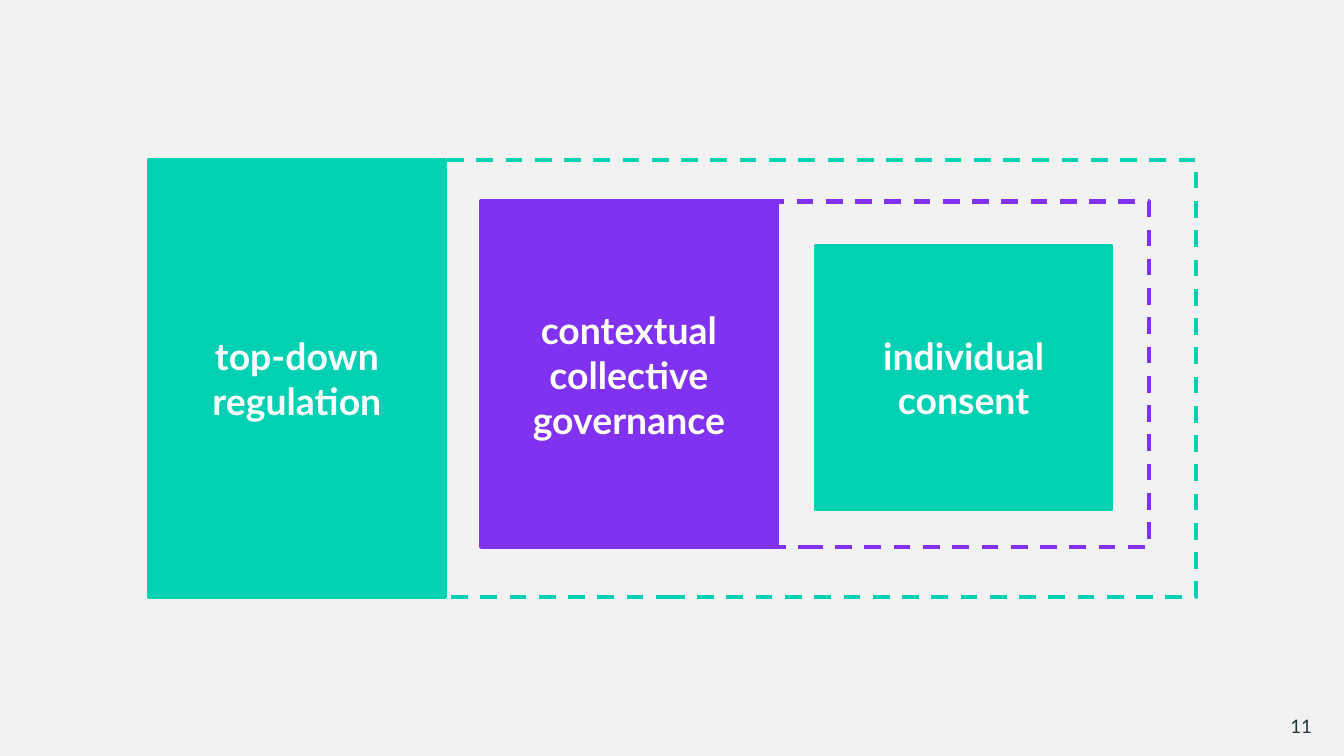
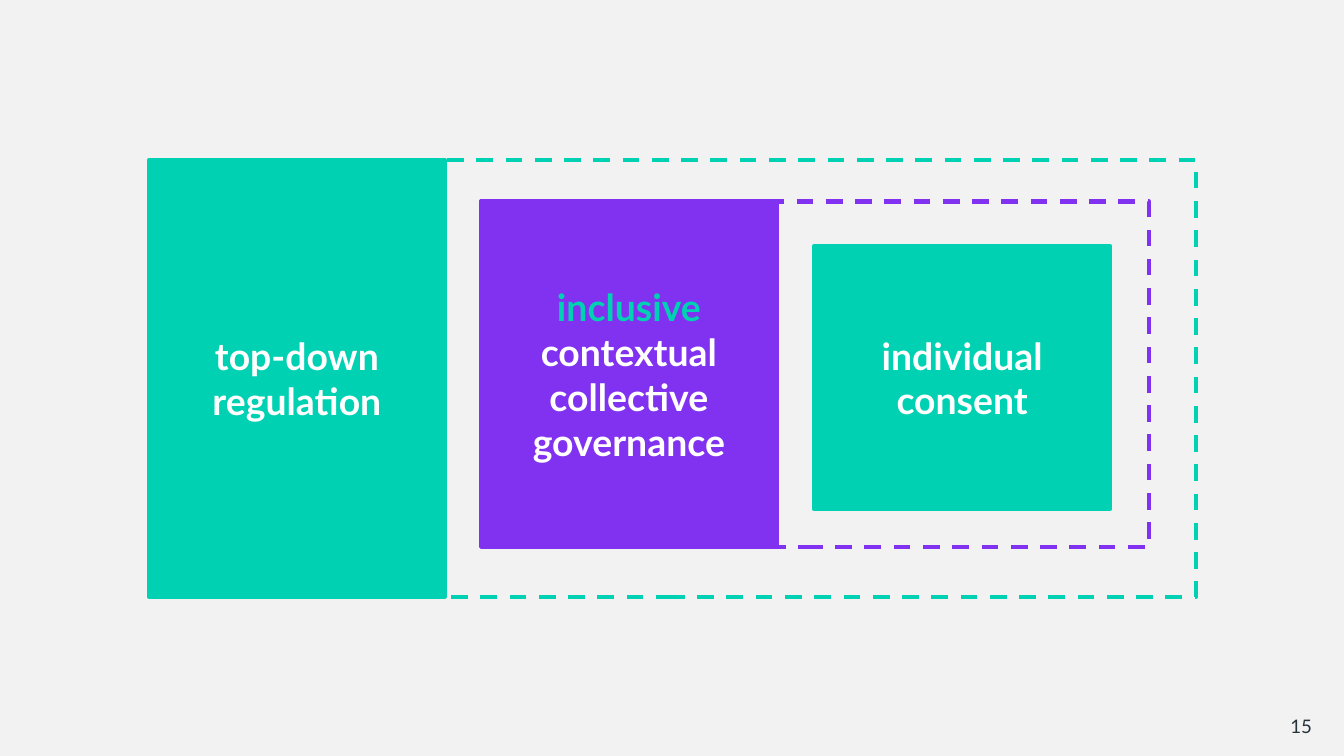
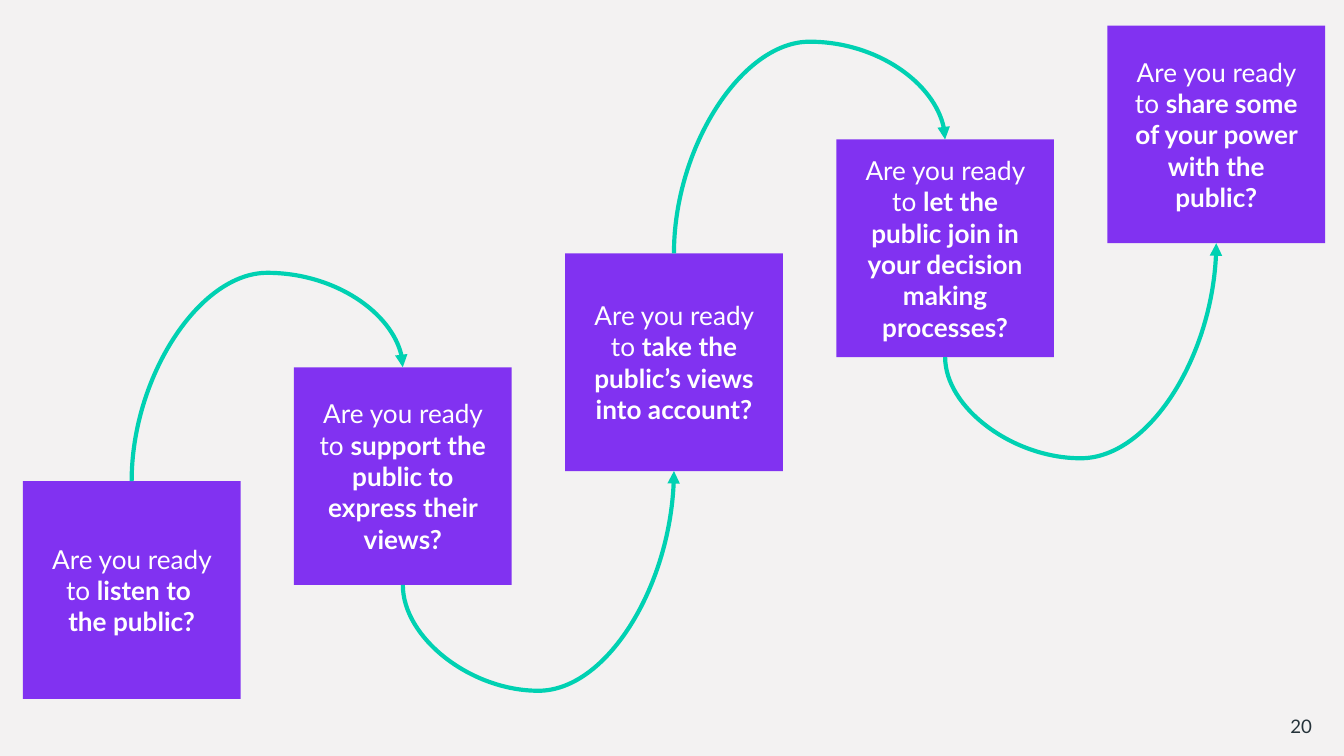
from dataclasses import dataclass

from lxml.etree import SubElement
from pptx import Presentation
from pptx.dml.color import RGBColor
from pptx.enum.dml import MSO_LINE as Dash
from pptx.enum.shapes import MSO_CONNECTOR as Link, MSO_SHAPE as Shape
from pptx.enum.text import MSO_ANCHOR as Anchor, PP_ALIGN as Align
from pptx.oxml.ns import qn
from pptx.slide import Slide
from pptx.text.text import TextFrame
from pptx.util import Inches, Pt

# Shared look
PAPER = RGBColor(0xF3, 0xF2, 0xF2)
TEAL = RGBColor(0x00, 0xD1, 0xB2)
VIOLET = RGBColor(0x81, 0x32, 0xF1)
WHITE = RGBColor(0xFF, 0xFF, 0xFF)
INK = RGBColor(0x25, 0x33, 0x3A)
FONT = "Lato"
STROKE = Pt(2.25)


@dataclass(frozen=True)
class Span:
    text: str
    bold: bool | None = None
    color: RGBColor | None = None


@dataclass(frozen=True)
class Box:
    left: float
    top: float
    width: float
    height: float
    color: RGBColor
    paras: tuple[tuple[Span, ...], ...] = ()
    size: int = 20
    bold: bool = True
    inset: float = 0.1
    lined: bool = True
    dashed: bool = False


@dataclass(frozen=True)
class Step:
    text: str
    bend: float | None  # height at which the arrow to the next step turns


def write(frame: TextFrame, paras: tuple[tuple[Span, ...], ...], size: int,
          color: RGBColor, bold: bool, align: Align, inset: float) -> None:
    frame.word_wrap = True
    frame.vertical_anchor = Anchor.MIDDLE
    frame.margin_left = frame.margin_right = Inches(inset)
    frame.margin_top = frame.margin_bottom = Inches(inset)
    for i, spans in enumerate(paras):
        para = frame.add_paragraph() if i else frame.paragraphs[0]
        para.alignment = align
        font = para.font
        font.name, font.size, font.bold = FONT, Pt(size), bold
        font.color.rgb = color
        for span in spans:
            for row, line in enumerate(span.text.split("\n")):
                if row:
                    para.add_line_break()
                if not line:
                    continue
                run = para.add_run()
                run.text = line
                if span.bold is not None:
                    run.font.bold = span.bold
                if span.color is not None:
                    run.font.color.rgb = span.color


def draw_box(slide: Slide, box: Box) -> None:
    shape = slide.shapes.add_shape(
        Shape.RECTANGLE, Inches(box.left), Inches(box.top),
        Inches(box.width), Inches(box.height))
    shape.shadow.inherit = False
    if box.dashed:
        shape.fill.background()
        shape.line.dash_style = Dash.DASH
    else:
        shape.fill.solid()
        shape.fill.fore_color.rgb = box.color
    if box.lined:
        shape.line.color.rgb = box.color
        shape.line.width = STROKE
    else:
        shape.line.fill.background()
    if box.paras:
        write(shape.text_frame, box.paras, box.size, WHITE, box.bold,
              Align.CENTER, box.inset)


def draw_curve(slide: Slide, start: tuple[float, float],
               end: tuple[float, float], bend: float) -> None:
    """Curve that leaves and arrives vertically, turning at height bend."""
    run, rise = end[0] - start[0], start[1] - end[1]
    mid_x, mid_y = (start[0] + end[0]) / 2, (start[1] + end[1]) / 2
    # The preset runs sideways, so it is laid out upright and turned
    curve = slide.shapes.add_connector(
        Link.CURVE, Inches(mid_x - rise / 2), Inches(mid_y - run / 2),
        Inches(mid_x + rise / 2), Inches(mid_y + run / 2))
    curve.line.color.rgb = TEAL
    curve.line.width = STROKE
    props = curve._element.spPr
    props.find(qn("a:xfrm")).set("rot", str(270 * 60000))
    guides = props.find(qn("a:prstGeom")).get_or_add_avLst()
    ratio = round((start[1] - bend) / rise * 100000)
    SubElement(guides, qn("a:gd"), name="adj1", fmla=f"val {ratio}")
    SubElement(props.find(qn("a:ln")), qn("a:tailEnd"), type="triangle")
    SubElement(props, qn("a:effectLst"))


def add_slide(deck: Presentation, number: int) -> Slide:
    slide = deck.slides.add_slide(deck.slide_layouts[6])
    label = slide.shapes.add_textbox(
        Inches(9.26), Inches(5.19), Inches(0.6), Inches(0.43))
    write(label.text_frame, ((Span(str(number)),),), 10, INK, False,
          Align.RIGHT, 0.1)
    return slide


# Nested layers of governance
LAYER = 2.2


def layers(deck: Presentation, number: int,
           middle: tuple[tuple[Span, ...], ...], last: float) -> None:
    slide = add_slide(deck, number)
    for box in (
        Box(1.11, 1.19, 7.79, 3.25, TEAL, dashed=True),
        Box(3.58, 1.5, 4.97, 2.57, VIOLET, dashed=True),
        Box(3.58, 1.5, LAYER, 2.57, VIOLET, middle),
        Box(1.11, 1.19, LAYER, 3.25, TEAL, ((Span("top-down regulation"),),)),
        Box(last, 1.83, LAYER, 1.96, TEAL, ((Span("individual consent"),),)),
    ):
        draw_box(slide, box)


# Staircase of questions
SIDE = 1.62
LEFT, RIGHT = 0.17, 8.24
LOW, HIGH = 3.58, 0.19
STEPS = (
    Step("listen to \nthe public?", 2.03),
    Step("support the public to express their views?", 5.14),
    Step("take the public’s views into account?", 0.31),
    Step("let the public join in your decision making processes?", 3.41),
    Step("share some of your power with the public?", None),
)


def stairs(deck: Presentation, number: int) -> None:
    slide = add_slide(deck, number)
    gaps = len(STEPS) - 1
    spots = [(LEFT + (RIGHT - LEFT) * i / gaps, LOW + (HIGH - LOW) * i / gaps)
             for i in range(len(STEPS))]
    for step, (left, top) in zip(STEPS, spots):
        spans = (Span("Are you ready to "), Span(step.text, bold=True))
        draw_box(slide, Box(left, top, SIDE, SIDE, VIOLET, (spans,), size=14,
                            bold=False, inset=0.14, lined=False))
    for i, (step, here, there) in enumerate(zip(STEPS, spots, spots[1:])):
        # Arrows alternate between top sides and bottom sides
        drop = SIDE if i % 2 else 0
        draw_curve(slide, (here[0] + SIDE / 2, here[1] + drop),
                   (there[0] + SIDE / 2, there[1] + drop), step.bend)


def main() -> None:
    deck = Presentation()
    deck.slide_width, deck.slide_height = Inches(10), Inches(5.625)
    paper = deck.slide_master.background.fill
    paper.solid()
    paper.fore_color.rgb = PAPER

    layers(deck, 11, ((Span("contextual\ncollective\ngovernance"),),), 6.07)
    layers(deck, 15, ((Span("inclusive\n", color=TEAL), Span("contextual")),
                      (Span("collective\ngovernance"),)), 6.06)
    stairs(deck, 20)
    deck.save("out.pptx")


if __name__ == "__main__":
    main()
